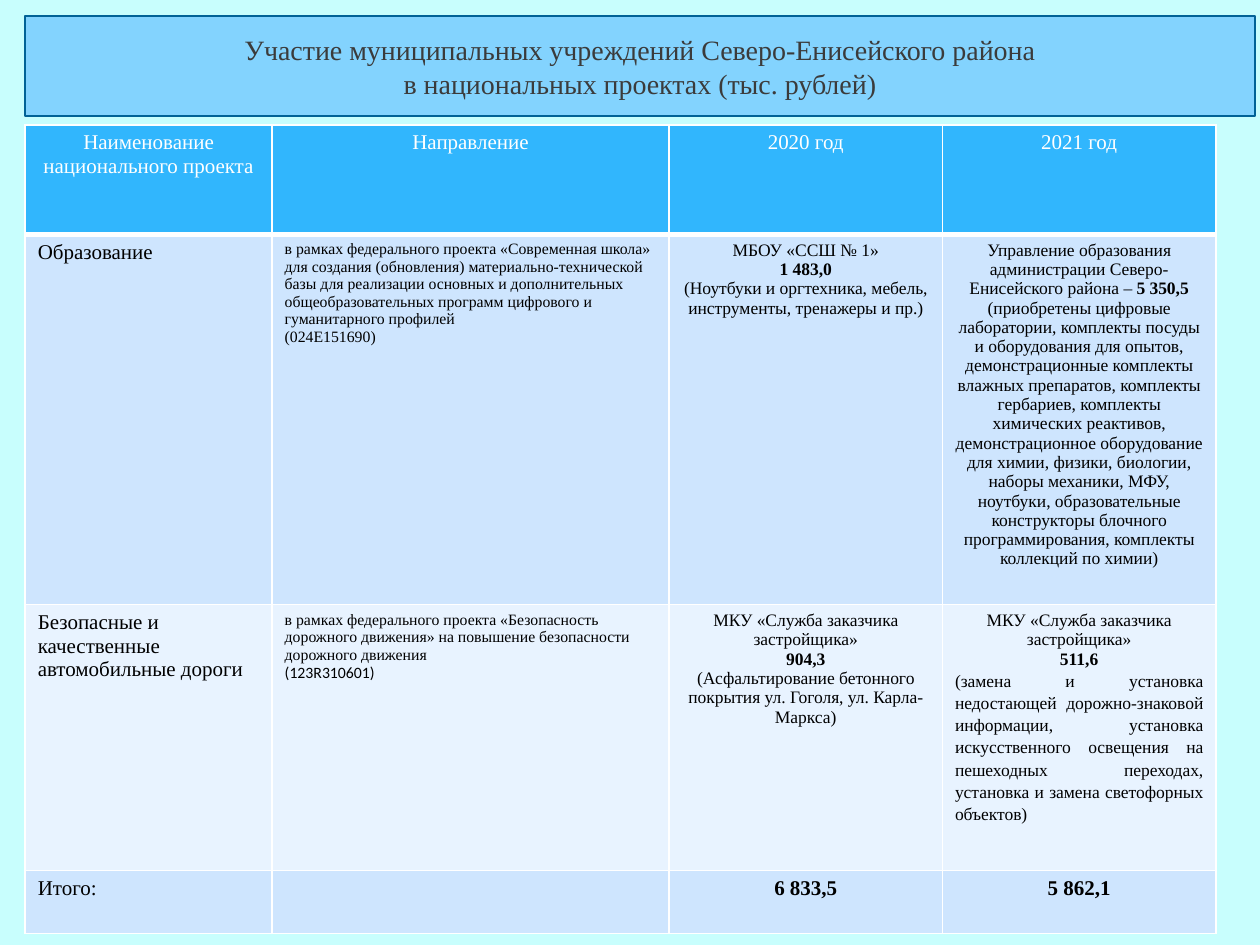
from lxml.etree import SubElement
from pptx import Presentation
from pptx.dml.color import RGBColor
from pptx.enum.text import MSO_ANCHOR, MSO_AUTO_SIZE, PP_ALIGN
from pptx.oxml.ns import qn
from pptx.util import Inches, Pt

BACK = RGBColor(0xC8, 0xFE, 0xFD)
BANNER = RGBColor(0x83, 0xD3, 0xFE)
EDGE = RGBColor(0x01, 0x62, 0x96)
GREY = RGBColor(0x3B, 0x3B, 0x3B)
HEAD = RGBColor(0x31, 0xB6, 0xFD)
BANDS = RGBColor(0xCE, 0xE5, 0xFE), RGBColor(0xE8, 0xF3, 0xFF)
WHITE = RGBColor(0xFF, 0xFF, 0xFF)
BLACK = RGBColor(0, 0, 0)
SERIF = "Times New Roman"
LEFT, MID, FULL = PP_ALIGN.LEFT, PP_ALIGN.CENTER, PP_ALIGN.JUSTIFY

TITLE = ["Участие муниципальных учреждений Северо-Енисейского района",
         "в национальных проектах (тыс. рублей)"]
COLS = [1.96, 3.15, 2.17, 2.17]
HEIGHTS = [0.87, 2.94, 2.11, 0.5]
# Each cell is a list of paragraphs; text between asterisks is bold.
ROWS = [
    [["Наименование национального проекта"], ["Направление"],
     ["2020 год"], ["2021 год"]],
    [["Образование"],
     ["в рамках федерального проекта «Современная школа» для создания "
      "(обновления) материально-технической базы для реализации основных и "
      "дополнительных общеобразовательных программ цифрового и "
      "гуманитарного профилей",
      "(024Е151690)"],
     ["МБОУ «ССШ № 1»", "*1 483,0*",
      "(Ноутбуки и оргтехника, мебель, инструменты, тренажеры и пр.)"],
     ["Управление образования администрации Северо-Енисейского района – "
      "*5 350,5*",
      "(приобретены цифровые лаборатории, комплекты посуды и оборудования "
      "для опытов, демонстрационные комплекты влажных препаратов, комплекты "
      "гербариев, комплекты химических реактивов, демонстрационное "
      "оборудование для химии, физики, биологии, наборы механики, МФУ, "
      "ноутбуки, образовательные конструкторы блочного программирования, "
      "комплекты коллекций по химии)"]],
    [["Безопасные и качественные автомобильные дороги"],
     ["в рамках федерального проекта «Безопасность дорожного движения» на "
      "повышение безопасности дорожного движения",
      "(123R310601)"],
     ["МКУ «Служба заказчика застройщика»", "*904,3*",
      "(Асфальтирование бетонного покрытия ул. Гоголя, ул. Карла-Маркса)"],
     ["МКУ «Служба заказчика застройщика»", "*511,6*",
      "(замена и установка недостающей дорожно-знаковой информации, "
      "установка искусственного освещения на пешеходных переходах, "
      "установка и замена светофорных объектов)"]],
    [["Итого:"], [], ["*6 833,5*"], ["*5 862,1*"]],
]


def write(frame, paras, size, color, align):
    """Fill a text frame, one paragraph per string."""
    for i, text in enumerate(paras):
        para = frame.paragraphs[0] if i == 0 else frame.add_paragraph()
        para.alignment = align
        for j, part in enumerate(text.split("*")):
            if part:
                run = para.add_run()
                run.text = part
                look = {"name": SERIF, "size": Pt(size), "bold": j % 2 == 1}
                for key, value in look.items():
                    setattr(run.font, key, value)
                run.font.color.rgb = color


def add_edges(cell, base):
    """Draw white cell borders, with the given bottom width in points."""
    props = cell._tc.get_or_add_tcPr()
    for i, (side, width) in enumerate(
            {"lnL": 1, "lnR": 1, "lnT": 1, "lnB": base}.items()):
        line = SubElement(props, qn("a:" + side), w=str(Pt(width)))
        fill = SubElement(line, qn("a:solidFill"))
        SubElement(fill, qn("a:srgbClr"), val=str(WHITE))
        props.insert(i, line)


def add_title(slide):
    box = slide.shapes.title
    place = {"left": 0.2, "top": 0.13, "width": 9.76, "height": 0.79}
    for key, value in place.items():
        setattr(box, key, Inches(value))
    box.fill.solid()
    box.fill.fore_color.rgb = BANNER
    box.line.color.rgb = EDGE
    box.line.width = Pt(1.25)
    frame = box.text_frame
    frame.auto_size = MSO_AUTO_SIZE.NONE
    frame.vertical_anchor = MSO_ANCHOR.MIDDLE
    write(frame, TITLE, 16, GREY, MID)


def text_size(row, col):
    if row in (0, len(ROWS) - 1) or col == 0:
        return 12
    return 9 if col == 1 else 10


def add_grid(slide):
    grid = slide.shapes.add_table(
        len(ROWS), len(COLS), Inches(0.2), Inches(0.99),
        Inches(sum(COLS)), Inches(sum(HEIGHTS))).table
    for col, width in zip(grid.columns, COLS):
        col.width = Inches(width)
    for r, (row, height) in enumerate(zip(ROWS, HEIGHTS)):
        grid.rows[r].height = Inches(height)
        for c, paras in enumerate(row):
            cell = grid.cell(r, c)
            cell.fill.solid()
            cell.fill.fore_color.rgb = BANDS[(r - 1) % 2] if r else HEAD
            add_edges(cell, 1 if r else 3)
            write(cell.text_frame, paras, text_size(r, c),
                  BLACK if r else WHITE, MID if r == 0 or c > 1 else LEFT)
    return grid


def main():
    deck = Presentation()
    deck.slide_width, deck.slide_height = Inches(10), Inches(7.5)
    slide = deck.slides.add_slide(deck.slide_layouts[5])
    slide.background.fill.solid()
    slide.background.fill.fore_color.rgb = BACK
    grid = add_grid(slide)
    code = grid.cell(2, 1).text_frame.paragraphs[-1]
    code.runs[0].font.name = "Calibri"
    works = grid.cell(2, 3).text_frame.paragraphs[-1]
    works.alignment, works.line_spacing = FULL, 1.15
    add_title(slide)
    deck.save("out.pptx")


if __name__ == "__main__":
    main()
